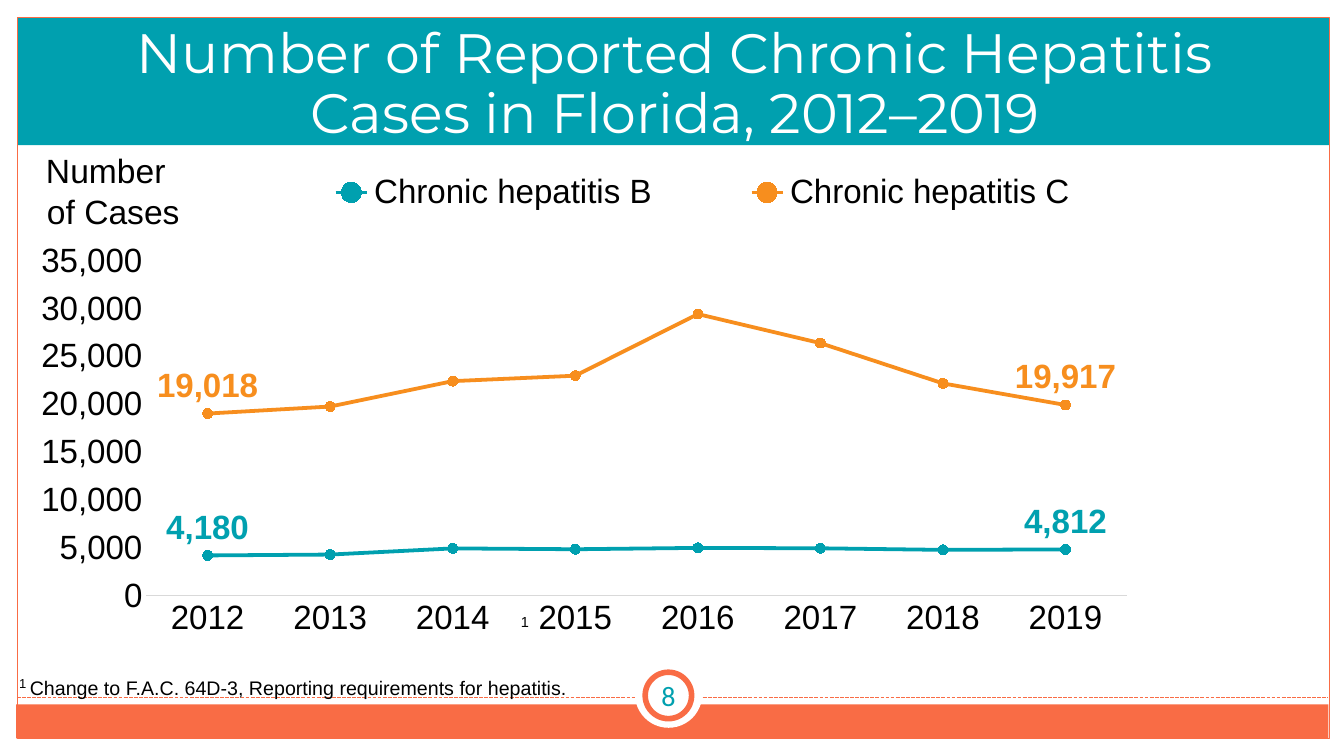
from dataclasses import dataclass

from lxml.etree import SubElement
from pptx import Presentation
from pptx.chart.data import CategoryChartData
from pptx.dml.color import RGBColor
from pptx.enum.chart import (XL_CHART_TYPE, XL_LABEL_POSITION, XL_LEGEND_POSITION,
                             XL_MARKER_STYLE, XL_TICK_MARK)
from pptx.enum.dml import MSO_LINE
from pptx.enum.shapes import MSO_CONNECTOR, MSO_SHAPE
from pptx.enum.text import MSO_ANCHOR, PP_ALIGN
from pptx.oxml import parse_xml
from pptx.oxml.ns import nsdecls, qn
from pptx.util import Cm, Pt


@dataclass(frozen=True)
class Theme:
    teal: str = "00A0AF"
    coral: str = "F96C45"
    amber: str = "F78E1E"
    white: str = "FFFFFF"
    black: str = "000000"
    gray: str = "D9D9D9"
    body: str = "Arial"
    head: str = "Montserrat"
    badge: str = "Calibri"
    title: float = 39.6
    large: float = 24
    page: float = 20
    mark: float = 18
    sup: float = 16
    note: float = 14


def put(item, values):
    """Set each format value on the item."""
    for name, value in values.items():
        setattr(item, name, value)


def paint(font, size, color, name, bold=False):
    put(font, {"size": Pt(size), "name": name, "bold": bold})
    font.color.rgb = RGBColor.from_string(color)


def stroke(line, color, width):
    line.color.rgb = RGBColor.from_string(color)
    line.width = Pt(width)


def place(chart, owner, spot, inner=False):
    """Give a chart part a fixed place, in fractions of the chart."""
    for old in owner.findall(qn("c:layout")):
        owner.remove(old)
    layout = parse_xml(f"<c:layout {nsdecls('c')}/>")
    manual = SubElement(layout, qn("c:manualLayout"))
    rules = [("layoutTarget", "inner")] if inner else []
    rules += [("xMode", "edge"), ("yMode", "edge"), *zip("xywh", spot)]
    for tag, value in rules:
        SubElement(manual, qn(f"c:{tag}")).set("val", str(value))
    owner.insert(0 if inner else 1, layout)


class Deck:
    def __init__(self, theme):
        self.theme = theme
        self.show = Presentation()
        put(self.show, {"slide_width": Cm(33.87), "slide_height": Cm(19.05)})
        self.slide = self.show.slides.add_slide(self.show.slide_layouts[6])

    def shape(self, kind, box, fill=None, line=None, width=0.75):
        item = self.slide.shapes.add_shape(kind, *map(Cm, box))
        item.shadow.inherit = False
        if fill:
            item.fill.solid()
            item.fill.fore_color.rgb = RGBColor.from_string(fill)
        else:
            item.fill.background()
        if line:
            stroke(item.line, line, width)
        else:
            item.line.fill.background()

    def rule(self, ends, color, width):
        item = self.slide.shapes.add_connector(MSO_CONNECTOR.STRAIGHT, *map(Cm, ends))
        stroke(item.line, color, width)
        item.line.dash_style = MSO_LINE.SQUARE_DOT
        SubElement(item.element.spPr, qn("a:effectLst"))

    def text(self, box, rows, color=None, name=None, anchor=MSO_ANCHOR.TOP,
             wrap=True, space=None):
        """Each row is an alignment and its runs: (text, size, raised)."""
        frame = self.slide.shapes.add_textbox(*map(Cm, box)).text_frame
        put(frame, {"word_wrap": wrap, "vertical_anchor": anchor})
        for i, (align, runs) in enumerate(rows):
            para = frame.add_paragraph() if i else frame.paragraphs[0]
            put(para, {"alignment": align, "line_spacing": space})
            for words, size, raised in runs:
                run = para.add_run()
                run.text = words
                paint(run.font, size, color or self.theme.black, name or self.theme.body)
                if raised:
                    run._r.get_or_add_rPr().set("baseline", "30000")

    def chart(self, box, years, cases, plot, key):
        look = self.theme
        data = CategoryChartData(number_format="#,##0")
        data.categories = years
        for name, (values, color) in cases.items():
            data.add_series(name, values)
        chart = self.slide.shapes.add_chart(
            XL_CHART_TYPE.LINE_MARKERS, *map(Cm, box), data).chart
        put(chart, {"has_title": False, "has_legend": True})
        paint(chart.font, look.large, look.black, look.body)

        # Legend and plot places
        put(chart.legend, {"position": XL_LEGEND_POSITION.BOTTOM,
                           "include_in_layout": False})
        paint(chart.legend.font, look.large, look.black, look.body)
        place(chart, chart.legend._element, key)
        place(chart, chart._chartSpace.chart.plotArea, plot, inner=True)

        # Axes
        for axis in (chart.category_axis, chart.value_axis):
            put(axis, {"has_major_gridlines": False,
                       "major_tick_mark": XL_TICK_MARK.NONE,
                       "minor_tick_mark": XL_TICK_MARK.NONE})
            paint(axis.tick_labels.font, look.large, look.black, look.body)
        stroke(chart.category_axis.format.line, look.gray, 0.75)
        put(chart.value_axis, {"minimum_scale": 0, "maximum_scale": 35000,
                               "major_unit": 5000})
        put(chart.value_axis.tick_labels, {"number_format": "#,##0",
                                           "number_format_is_linked": False})
        chart.value_axis.format.line.fill.background()

        # Series, with a label on the first and last year
        chart.plots[0].vary_by_categories = False
        for line, (values, color) in zip(chart.plots[0].series, cases.values()):
            line.smooth = False
            stroke(line.format.line, color, 2.75)
            put(line.marker, {"style": XL_MARKER_STYLE.CIRCLE, "size": 7})
            line.marker.format.fill.solid()
            line.marker.format.fill.fore_color.rgb = RGBColor.from_string(color)
            stroke(line.marker.format.line, color, 0.75)
            for i in (0, len(values) - 1):
                label = line.points[i].data_label
                paint(label.font, look.large, color, look.body, True)
                label.position = XL_LABEL_POSITION.ABOVE


def main():
    look = Theme()
    deck = Deck(look)
    left, mid = PP_ALIGN.LEFT, PP_ALIGN.CENTER

    # Bands and frame
    deck.shape(MSO_SHAPE.RECTANGLE, (0.43, 0.46, 33.07, 3.2), look.teal)
    deck.shape(MSO_SHAPE.RECTANGLE, (0.41, 17.75, 33.07, 0.86), look.coral)
    deck.shape(MSO_SHAPE.RECTANGLE, (0.43, 0.43, 33.07, 18.19), line=look.coral)
    deck.rule((0.43, 17.58, 33.48, 17.58), look.coral, 0.9)

    # Page badge
    deck.shape(MSO_SHAPE.OVAL, (16, 16.64, 1.7, 1.7), look.white)
    deck.shape(MSO_SHAPE.OVAL, (16.26, 16.94, 1.17, 1.17), look.white, look.coral, 4)
    deck.text((15.77, 16.92, 2.16, 1.22), [(mid, [("8", look.page, False)])],
              look.teal, look.badge, MSO_ANCHOR.MIDDLE)

    # Chart of cases
    cases = {
        "Chronic hepatitis B": (
            (4180, 4271, 4914, 4827, 4971, 4927, 4763, 4812), look.teal),
        "Chronic hepatitis C": (
            (19018, 19757, 22412, 22981, 29423, 26389, 22175, 19917), look.amber),
    }
    deck.chart((1.04, 3.63, 29.92, 13.56), [str(y) for y in range(2012, 2020)], cases,
               plot=(0.074, 0.217, 0.839, 0.622), key=(0.16, 0.04, 0.78, 0.1))

    # Title, axis caption and footnote
    heading = "Number of Reported Chronic Hepatitis Cases in Florida, 2012–2019"
    deck.text((1.88, 0.66, 30.25, 3), [(mid, [(heading, look.title, False)])],
              look.white, look.head, MSO_ANCHOR.MIDDLE, space=0.9)
    deck.text((0.91, 3.66, 3.89, 2.31), [(left, [("Number", look.large, False)]),
                                         (mid, [("of Cases", look.large, False)])])
    note = "Change to F.A.C. 64D-3, Reporting requirements for hepatitis."
    deck.text((0.23, 16.84, 29.92, 0.86), [(left, [("1 ", look.sup, True),
                                                   (note, look.note, False)])])
    deck.text((12.88, 15.24, 0.74, 1.02), [(left, [("1", look.mark, True)])], wrap=False)

    deck.show.save("out.pptx")


if __name__ == "__main__":
    main()
